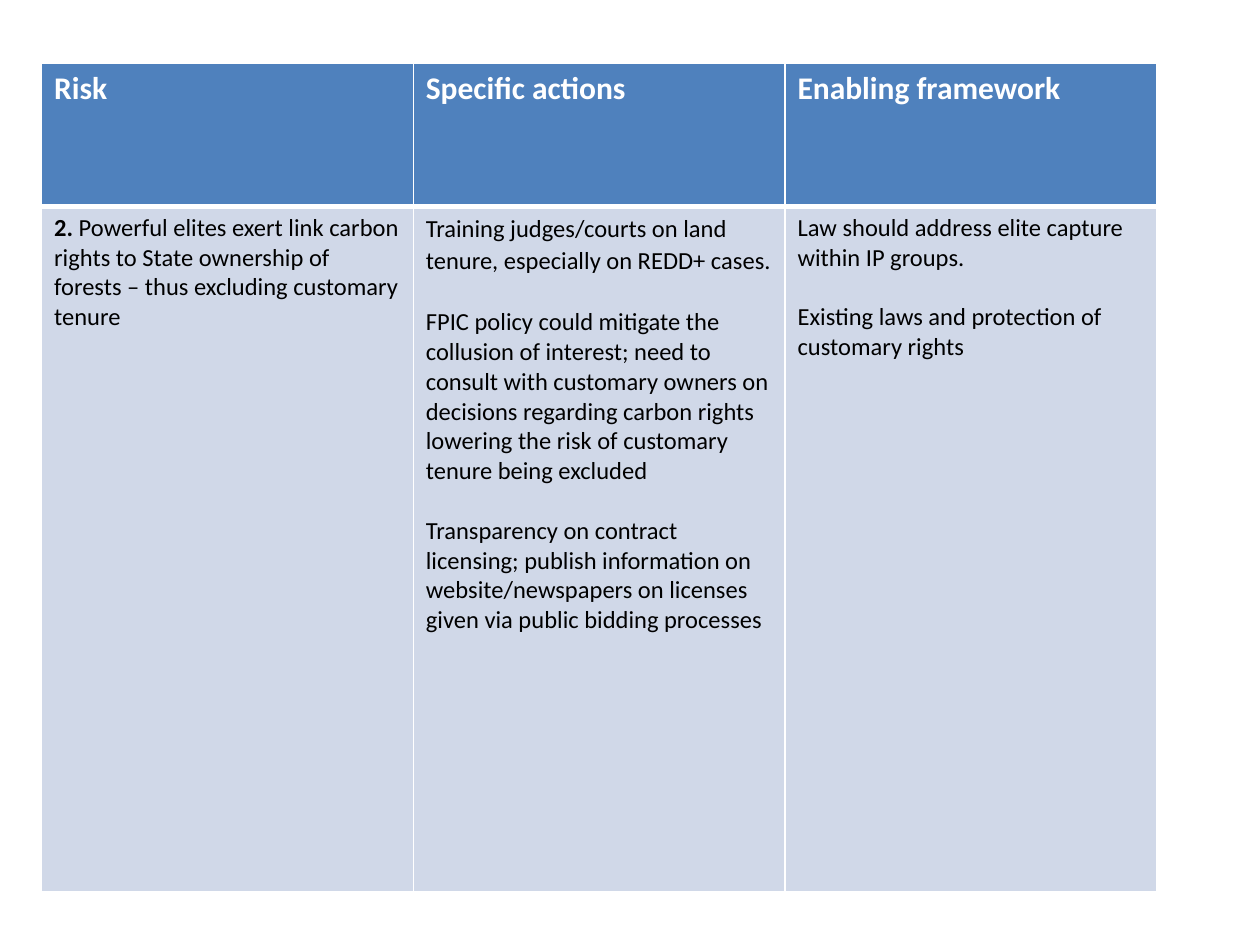
import pptx
import pptx.dml.color
import pptx.oxml
import pptx.oxml.ns
import pptx.util
from dataclasses import dataclass


@dataclass(frozen=True)
class Theme:
    font: str = "Calibri"
    header_size: int = 18
    body_size: int = 14
    white: str = "FFFFFF"
    black: str = "000000"
    header_fill: str = "4F81BD"
    body_fill: str = "D0D8E8"
    thin: float = 1
    thick: float = 3


T = Theme()

# Content: each body cell is a list of paragraphs, each a list of (text, bold)
HEADERS = ["Risk", "Specific actions", "Enabling framework"]
BODY = [
    [[("2. ", True),
      ("Powerful elites exert link carbon rights to State ownership of forests "
       "– thus excluding customary tenure", False)]],
    [[("Training judges/courts on land tenure, especially on REDD+ cases.", False)],
     [("FPIC policy could mitigate the collusion of interest; need to consult with "
       "customary owners on decisions regarding carbon rights lowering the risk of "
       "customary tenure being excluded", False)],
     [("Transparency on contract licensing; publish information on "
       "website/newspapers on licenses given via public bidding processes", False)]],
    [[("Law should address elite capture within IP groups.", False)],
     [("Existing laws and protection of customary rights", False)]],
]
ROWS = [[[[(h, True)]] for h in HEADERS], BODY]

# Layout in inches
SLIDE_W, SLIDE_H = 10, 7.5
LEFT, TOP, COL_W = 0.33, 0.5, 2.95
ROW_H = [1.14, 5.44]
LINE_GAP = 17  # points, one line of body text
TRAINING_SPACING = 18  # points, exact line pitch of the first action


def set_borders(cell, top, bottom):
    tcPr = cell._tc.get_or_add_tcPr()
    widths = {"L": T.thin, "R": T.thin, "T": top, "B": bottom}
    for side, width in widths.items():
        tcPr.append(pptx.oxml.parse_xml(
            f'<a:ln{side} {pptx.oxml.ns.nsdecls("a")} w="{pptx.util.Pt(width)}">'
            f'<a:solidFill><a:srgbClr val="{T.white}"/></a:solidFill></a:ln{side}>'))


def fill_cell(cell, paragraphs, size, color, fill):
    cell.fill.solid()
    cell.fill.fore_color.rgb = pptx.dml.color.RGBColor.from_string(fill)
    tf = cell.text_frame
    tf.text = "\n".join("" for _ in paragraphs)
    for i, (p, runs) in enumerate(zip(tf.paragraphs, paragraphs)):
        if i:
            p.space_before = pptx.util.Pt(LINE_GAP)
        for text, bold in runs:
            r = p.add_run()
            r.text = text
            r.font.name = T.font
            r.font.size = pptx.util.Pt(size)
            r.font.bold = bold
            r.font.color.rgb = pptx.dml.color.RGBColor.from_string(color)


prs = pptx.Presentation()
prs.slide_width = pptx.util.Inches(SLIDE_W)
prs.slide_height = pptx.util.Inches(SLIDE_H)
s = prs.slides.add_slide(prs.slide_layouts[6])

# Risk table
table = s.shapes.add_table(
    len(ROWS), len(HEADERS), pptx.util.Inches(LEFT), pptx.util.Inches(TOP),
    pptx.util.Inches(COL_W * len(HEADERS)), pptx.util.Inches(sum(ROW_H))).table
for column in table.columns:
    column.width = pptx.util.Inches(COL_W)
for row, height in zip(table.rows, ROW_H):
    row.height = pptx.util.Inches(height)

# Header row is blue with a thick rule below, body row is pale
styles = [
    ((T.thin, T.thick), (T.header_size, T.white, T.header_fill)),
    ((T.thick, T.thin), (T.body_size, T.black, T.body_fill)),
]
for row, contents, (borders, style) in zip(table.rows, ROWS, styles):
    for cell, paragraphs in zip(row.cells, contents):
        set_borders(cell, *borders)
        fill_cell(cell, paragraphs, *style)

# The first action has a looser line pitch, also in the gap after it
training, fpic = table.cell(1, 1).text_frame.paragraphs[:2]
training.line_spacing = pptx.util.Pt(TRAINING_SPACING)
fpic.space_before = pptx.util.Pt(TRAINING_SPACING)

prs.save("out.pptx")
